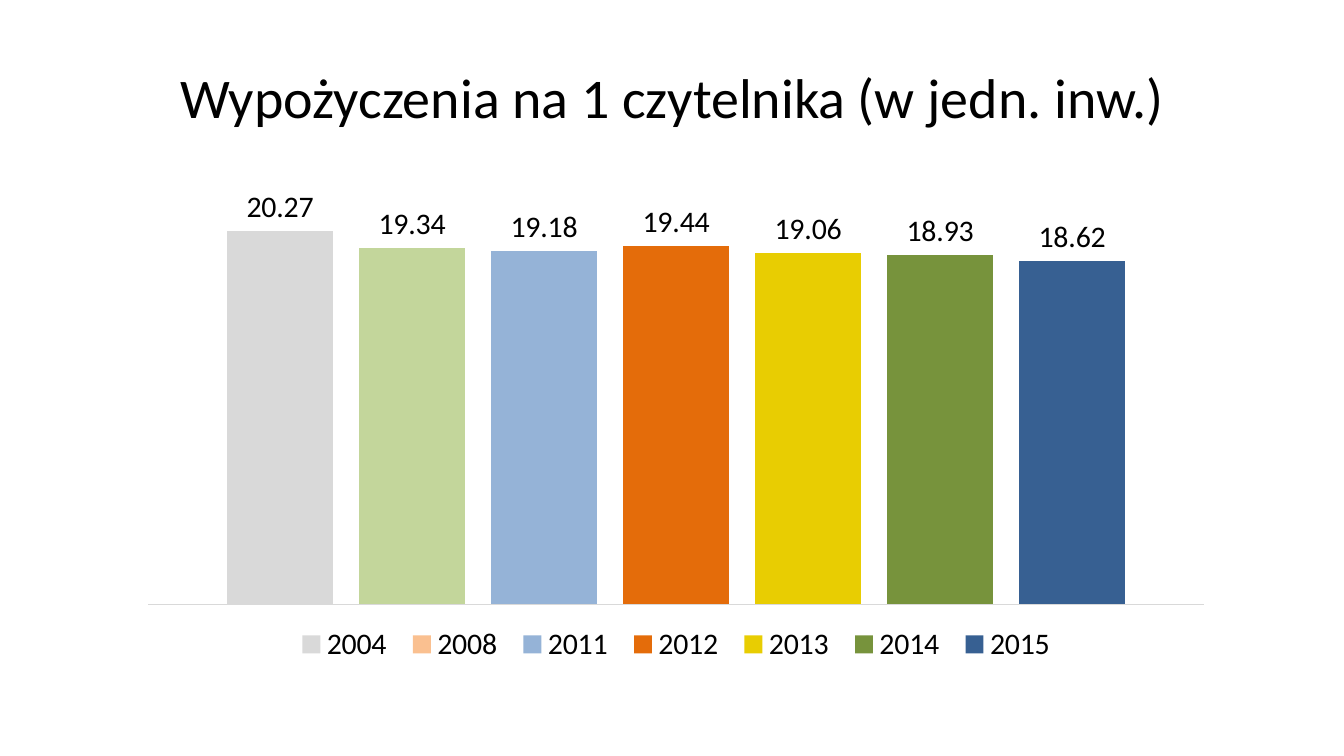
import pptx
import pptx.chart.data
import pptx.dml.color
import pptx.enum.chart
import pptx.enum.text
import pptx.oxml
import pptx.oxml.ns
import pptx.util

PX = 9525  # EMU in one px, 96 px to the inch
FONT = "Calibri"
LOANS = [  # year, loans per reader, series colour
    ("2004", 20.27, "D9D9D9"),
    ("2008", 19.34, "FAC090"),
    ("2011", 19.18, "95B3D7"),
    ("2012", 19.44, "E46C0A"),
    ("2013", 19.06, "E8CD02"),
    ("2014", 18.93, "77933C"),
    ("2015", 18.62, "376092"),
]
COLUMN_COLORS = {"2008": "C3D69B"}  # columns that differ from their legend key


def color(value):
    return pptx.dml.color.RGBColor.from_string(value)


def set_fill(part, value):
    part.format.fill.solid()
    part.format.fill.fore_color.rgb = color(value)


def set_font(font, size, value="000000"):
    font.name = FONT
    font.size = pptx.util.Pt(size)
    font.color.rgb = color(value)


def set_layout(parent, index, box, target=""):
    """Fix a chart part's box, in fractions of the chart."""
    for old in parent.findall(pptx.oxml.ns.qn("c:layout")):
        parent.remove(old)
    layout = pptx.oxml.parse_xml(
        f'<c:layout {pptx.oxml.ns.nsdecls("c")}><c:manualLayout>{target}'
        '<c:xMode val="edge"/><c:yMode val="edge"/>'
        + "".join(f'<c:{name} val="{value}"/>' for name, value in zip("xywh", box))
        + "</c:manualLayout></c:layout>"
    )
    parent.insert(index, layout)


def add_title(page, box, text):
    title = page.shapes.title
    title.left, title.top, title.width, title.height = (n * PX for n in box)
    frame = title.text_frame
    frame.word_wrap = True
    frame.auto_size = pptx.enum.text.MSO_AUTO_SIZE.NONE
    frame.vertical_anchor = pptx.enum.text.MSO_ANCHOR.MIDDLE
    para = frame.paragraphs[0]
    para.alignment = pptx.enum.text.PP_ALIGN.CENTER
    span = para.add_run()
    span.text = text
    set_font(span.font, 30)


def add_loans_chart(page, box):
    data = pptx.chart.data.CategoryChartData(number_format="General")
    data.categories = ["1"]
    for year, loans, _ in LOANS:
        data.add_series(year, [loans])
    chart = page.shapes.add_chart(
        pptx.enum.chart.XL_CHART_TYPE.COLUMN_CLUSTERED, *(n * PX for n in box), data
    ).chart
    chart.has_title = False
    set_font(chart.font, 10)

    # Columns and their value labels
    plot = chart.plots[0]
    plot.vary_by_categories = False
    plot.gap_width = 150
    plot.overlap = -25
    for series, (year, _, fill) in zip(plot.series, LOANS):
        set_fill(series, fill)
        if year in COLUMN_COLORS:
            set_fill(series.points[0], COLUMN_COLORS[year])
        labels = series.data_labels
        labels.show_value = True
        labels.position = pptx.enum.chart.XL_LABEL_POSITION.OUTSIDE_END
        set_font(labels.font, 16)
    plot_area = plot._element.getparent()
    set_layout(plot_area, 0, (0.04, 0.04, 0.92, 0.75), '<c:layoutTarget val="inner"/>')

    # Axes without labels; only the base line shows
    for axis in (chart.category_axis, chart.value_axis):
        axis.has_major_gridlines = False
        axis.major_tick_mark = pptx.enum.chart.XL_TICK_MARK.NONE
        axis.tick_label_position = pptx.enum.chart.XL_TICK_LABEL_POSITION.NONE
        set_font(axis.tick_labels.font, 12, "595959")
    base_line = chart.category_axis.format.line
    base_line.color.rgb = color("D9D9D9")
    base_line.width = pptx.util.Pt(0.75)
    chart.value_axis.format.line.fill.background()
    chart.value_axis.minimum_scale = 0
    chart.value_axis.maximum_scale = 25

    # Legend close under the base line
    chart.has_legend = True
    legend = chart.legend
    legend.position = pptx.enum.chart.XL_LEGEND_POSITION.BOTTOM
    legend.include_in_layout = False
    set_font(legend.font, 16)
    set_layout(legend._element, 1, (0.16, 0.81, 0.68, 0.09))


def main():
    deck = pptx.Presentation()
    deck.slide_width, deck.slide_height = 960 * PX, 540 * PX
    page = deck.slides.add_slide(deck.slide_layouts[5])
    add_title(page, (105, 19, 751, 100), "Wypożyczenia na 1 czytelnika (w jedn. inw.)")
    add_loans_chart(page, (73, 85, 820, 439))
    deck.save("out.pptx")


if __name__ == "__main__":
    main()
